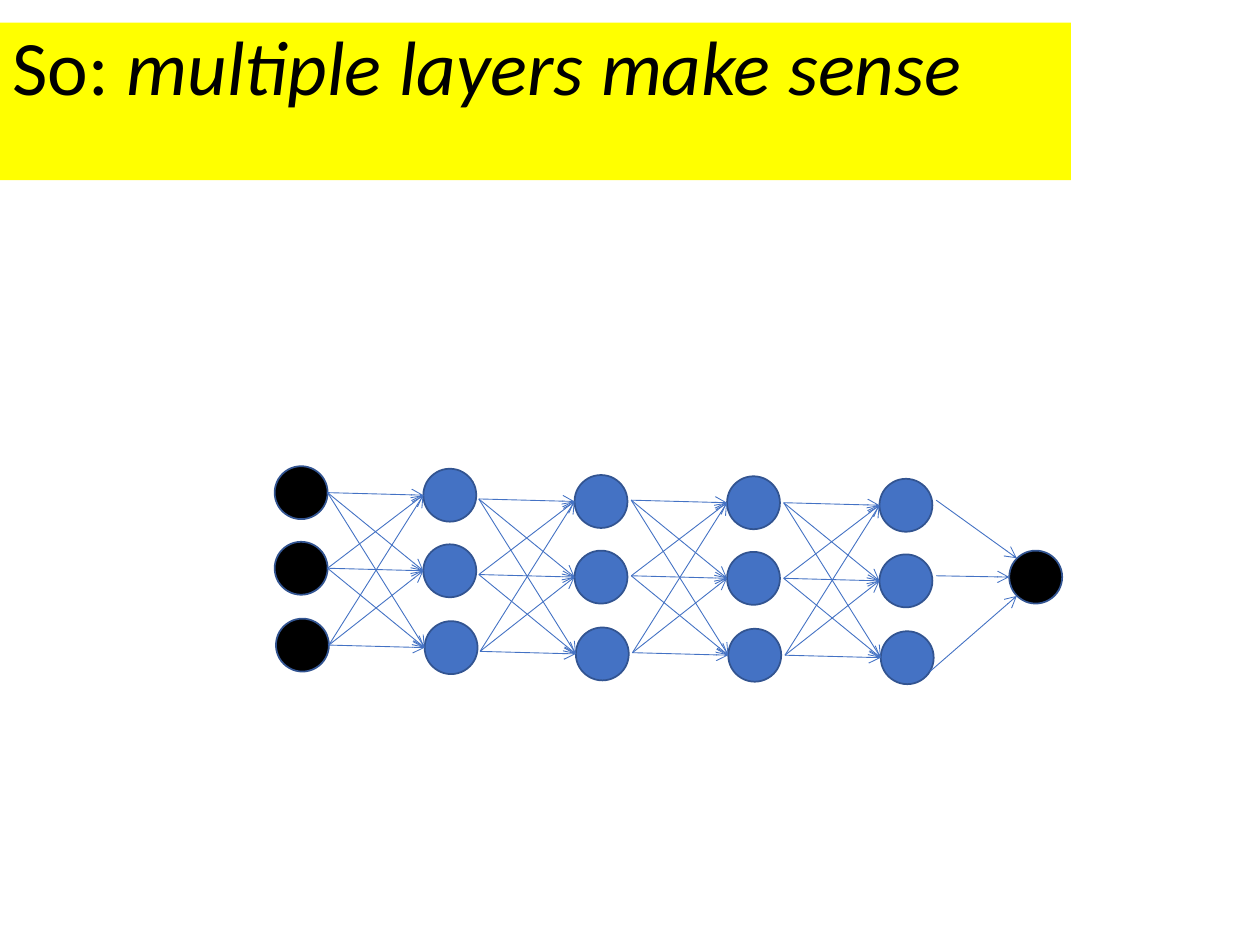
from typing import NamedTuple

from lxml import etree
from pptx import Presentation
from pptx.dml.color import RGBColor
from pptx.enum.shapes import MSO_CONNECTOR, MSO_SHAPE
from pptx.enum.text import MSO_ANCHOR, MSO_AUTO_SIZE, PP_ALIGN
from pptx.oxml.ns import qn
from pptx.util import Inches, Pt

OVAL = MSO_SHAPE.OVAL
STRAIGHT = MSO_CONNECTOR.STRAIGHT
TOP = MSO_ANCHOR.TOP
LEFT = PP_ALIGN.LEFT
NO_AUTOFIT = MSO_AUTO_SIZE.NONE

BLACK, BLUE, DARK_BLUE, YELLOW = "000000", "4472C4", "325491", "FFFF00"
DIAMETER = 0.42


class Point(NamedTuple):
    x: float
    y: float

    def shifted(self, dx: float, dy: float) -> "Point":
        return Point(self.x + dx, self.y + dy)


class Layer(NamedTuple):
    origin: Point  # top left of the first node
    color: str

    def nodes(self) -> list[Point]:
        return [self.origin.shifted(*offset) for offset in NODE_OFFSETS]


NODE_OFFSETS = [(0, 0), (0, 0.6), (0.01, 1.21)]
LAYERS = [
    Layer(Point(2.18, 3.7), BLACK),
    Layer(Point(3.36, 3.72), BLUE),
    Layer(Point(4.56, 3.77), BLUE),
    Layer(Point(5.77, 3.78), BLUE),
    Layer(Point(6.98, 3.8), BLUE),
]
OUTPUT_NODE = Point(8.01, 4.37)
OUTPUT_ARROWS = [
    (Point(7.43, 3.97), Point(8.07, 4.43)),
    (Point(7.43, 4.57), Point(8.01, 4.58)),
    (Point(7.38, 5.33), Point(8.07, 4.73)),
]


def rgb(color: str) -> RGBColor:
    return RGBColor.from_string(color)


def add_title(s) -> None:
    sp = s.shapes.title
    sp.left, sp.top = Inches(0), Inches(0.18)
    sp.width, sp.height = Inches(8.5), Inches(1.25)
    sp.fill.solid()
    sp.fill.fore_color.rgb = rgb(YELLOW)
    tf = sp.text_frame
    tf.word_wrap = True
    tf.auto_size = NO_AUTOFIT
    tf.vertical_anchor = TOP
    p = tf.paragraphs[0]
    p.alignment = LEFT
    p.line_spacing = 0.9
    for text, italic in [("So: ", False), ("multiple layers make sense", True)]:
        r = p.add_run()
        r.text = text
        r.font.name = "Calibri"
        r.font.size = Pt(44)
        r.font.italic = italic
        r.font.color.rgb = rgb(BLACK)


def add_node(s, at: Point, color: str) -> None:
    sp = s.shapes.add_shape(OVAL, Inches(at.x), Inches(at.y),
                            Inches(DIAMETER), Inches(DIAMETER))
    sp.shadow.inherit = False
    sp.fill.solid()
    sp.fill.fore_color.rgb = rgb(color)
    sp.line.color.rgb = rgb(DARK_BLUE)
    sp.line.width = Pt(1)


def add_arrow(s, start: Point, end: Point) -> None:
    cx = s.shapes.add_connector(STRAIGHT, Inches(start.x), Inches(start.y),
                                Inches(end.x), Inches(end.y))
    cx.line.color.rgb = rgb(BLUE)
    cx.line.width = Pt(0.5)
    etree.SubElement(cx.line._get_or_add_ln(), qn("a:tailEnd"), type="arrow")
    etree.SubElement(cx._element.spPr, qn("a:effectLst"))


def connect_into(s, layer: Layer) -> None:
    """Draw an arrow from each node of the previous layer to each node here."""
    for source in layer.nodes():
        for target in layer.nodes():
            add_arrow(s, source.shifted(-0.76, 0.19),
                      target.shifted(0, DIAMETER / 2))


def main() -> None:
    prs = Presentation()
    prs.slide_width, prs.slide_height = Inches(10), Inches(7.5)
    s = prs.slides.add_slide(prs.slide_layouts[5])
    add_title(s)

    # Input and hidden layers
    for i, layer in enumerate(LAYERS):
        for node in layer.nodes():
            add_node(s, node, layer.color)
        if i > 0:
            connect_into(s, layer)

    # Output node
    add_node(s, OUTPUT_NODE, BLACK)
    for start, end in OUTPUT_ARROWS:
        add_arrow(s, start, end)

    prs.save("out.pptx")


if __name__ == "__main__":
    main()
